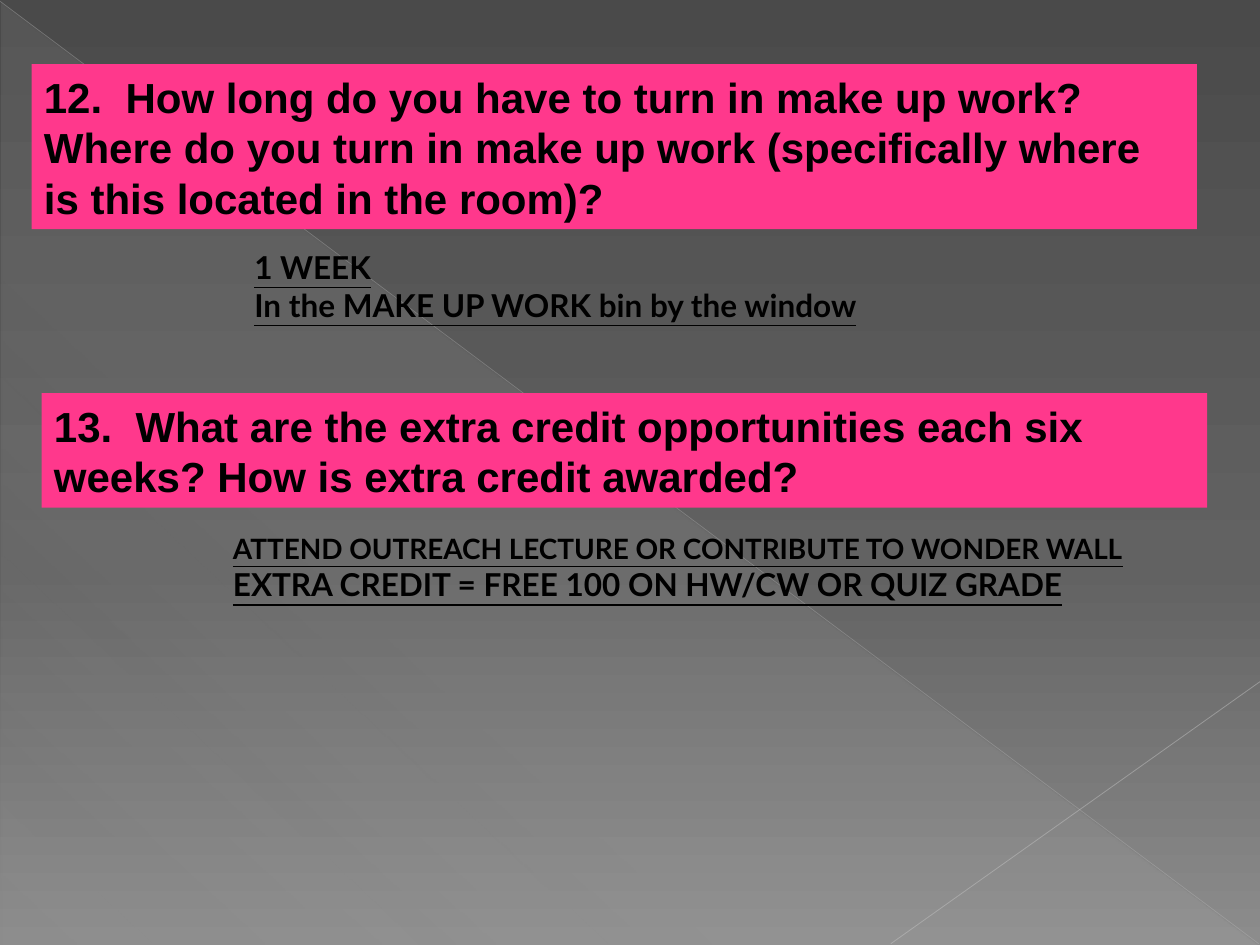
from lxml import etree
from pptx import Presentation
from pptx.dml.color import RGBColor
from pptx.enum.shapes import MSO_CONNECTOR, MSO_SHAPE
from pptx.enum.text import MSO_ANCHOR, PP_ALIGN
from pptx.oxml import parse_xml
from pptx.oxml.ns import nsdecls, qn
from pptx.util import Inches, Pt

WIDTH, HEIGHT = 10, 7.5
BLACK = RGBColor(0x00, 0x00, 0x00)
PINK = RGBColor(0xFF, 0x38, 0x8C)
DARK_GREY = RGBColor(0x4A, 0x4A, 0x4A)
MIDDLE_GREY = RGBColor(0x62, 0x62, 0x62)
LIGHT_GREY = RGBColor(0x8C, 0x8C, 0x8C)
PALE_GREY = RGBColor(0xD2, 0xD2, 0xD2)
DIAGONAL_GREY = RGBColor(0xBF, 0xBF, 0xBF)
CORNER_GREY = RGBColor(0xC6, 0xC6, 0xC6)

# Gradient stops: position, colour, opacity (percent)
BACKGROUND_STOPS = [(0, DARK_GREY, 100), (60, MIDDLE_GREY, 100), (100, LIGHT_GREY, 100)]
TRIANGLE_STOPS = [(0, PALE_GREY, 10), (70, PALE_GREY, 8), (100, PALE_GREY, 1)]

# Start, end, colour, width in points, opacity
LINES = [
    ((0, 0.01), (9.99, 7.49), DIAGONAL_GREY, 0.39, 35),
    ((10, 5.41), (7.07, 7.49), CORNER_GREY, 0.47, 45),
]

QUESTION_WIDTH, ANSWER_WIDTH = 9.25, 7.92
QUESTIONS = [
    {
        "question": "12.  How long do you have to turn in make up work? Where do you "
                    "turn in make up work (specifically where is this located in the room)?",
        "question_box": (0.25, 0.51, QUESTION_WIDTH, 1.31),
        "answers": [("1 WEEK", 18), ("In the MAKE UP WORK bin by the window", 18)],
        "answer_box": (1.92, 1.92, ANSWER_WIDTH, 1.01),
    },
    {
        "question": "13.  What are the extra credit opportunities each six weeks? "
                    "How is extra credit awarded?",
        "question_box": (0.33, 3.12, QUESTION_WIDTH, 0.91),
        "answers": [("ATTEND OUTREACH LECTURE OR CONTRIBUTE TO WONDER WALL", 16),
                    ("EXTRA CREDIT = FREE 100 ON HW/CW OR QUIZ GRADE", 18)],
        "answer_box": (1.75, 4.17, ANSWER_WIDTH, 0.98),
    },
]


def set_gradient(fill, properties, stops, angle):
    """Swap a solid fill for a linear gradient; the angle runs clockwise."""
    fill.solid()
    stop_xml = "".join(
        f'<a:gs pos="{position * 1000}"><a:srgbClr val="{color}">'
        f'<a:alpha val="{opacity * 1000}"/></a:srgbClr></a:gs>'
        for position, color, opacity in stops)
    gradient = parse_xml(
        f'<a:gradFill {nsdecls("a")} rotWithShape="1"><a:gsLst>{stop_xml}</a:gsLst>'
        f'<a:lin ang="{angle * 60000}" scaled="0"/></a:gradFill>')
    solid = properties.find(qn("a:solidFill"))
    properties.replace(solid, gradient)


def add_box(slide, kind, box):
    shape = slide.shapes.add_shape(kind, *map(Inches, box))
    shape.shadow.inherit = False
    shape.line.fill.background()
    return shape


def add_line(slide, start, end, color, width, opacity):
    line = slide.shapes.add_connector(
        MSO_CONNECTOR.STRAIGHT, *map(Inches, start + end))
    line.line.color.rgb = color
    line.line.width = Pt(width)
    properties = line._element.spPr
    color_element = properties.find(".//" + qn("a:srgbClr"))
    etree.SubElement(color_element, qn("a:alpha"), val=str(opacity * 1000))
    etree.SubElement(properties, qn("a:effectLst"))


def write_text(shape, paragraphs, font, underline=False, anchor=MSO_ANCHOR.TOP):
    """Fill a shape with bold (text, size) paragraphs."""
    frame = shape.text_frame
    frame.word_wrap = True
    frame.vertical_anchor = anchor
    for index, (text, size) in enumerate(paragraphs):
        paragraph = frame.add_paragraph() if index else frame.paragraphs[0]
        paragraph.alignment = PP_ALIGN.LEFT
        run = paragraph.add_run()
        run.text = text
        run.font.name = font
        run.font.size = Pt(size)
        run.font.bold = True
        run.font.underline = underline
        run.font.color.rgb = BLACK


def main():
    presentation = Presentation()
    presentation.slide_width = Inches(WIDTH)
    presentation.slide_height = Inches(HEIGHT)
    slide = presentation.slides.add_slide(presentation.slide_layouts[6])

    background_fill = slide.background.fill
    background_fill.solid()
    background = slide._element.find(".//" + qn("p:bgPr"))
    set_gradient(background_fill, background, BACKGROUND_STOPS, 90)

    triangle = add_box(slide, MSO_SHAPE.RIGHT_TRIANGLE, (0.01, 0.02, 9.98, 7.48))
    set_gradient(triangle.fill, triangle._element.spPr, TRIANGLE_STOPS, 133)
    for line in LINES:
        add_line(slide, *line)

    for item in QUESTIONS:
        question = add_box(slide, MSO_SHAPE.RECTANGLE, item["question_box"])
        question.fill.solid()
        question.fill.fore_color.rgb = PINK
        write_text(question, [(item["question"], 24)], "Arial", anchor=MSO_ANCHOR.MIDDLE)
        answer = slide.shapes.add_textbox(*map(Inches, item["answer_box"]))
        write_text(answer, item["answers"], "Lato", underline=True)

    presentation.save("out.pptx")


if __name__ == "__main__":
    main()
